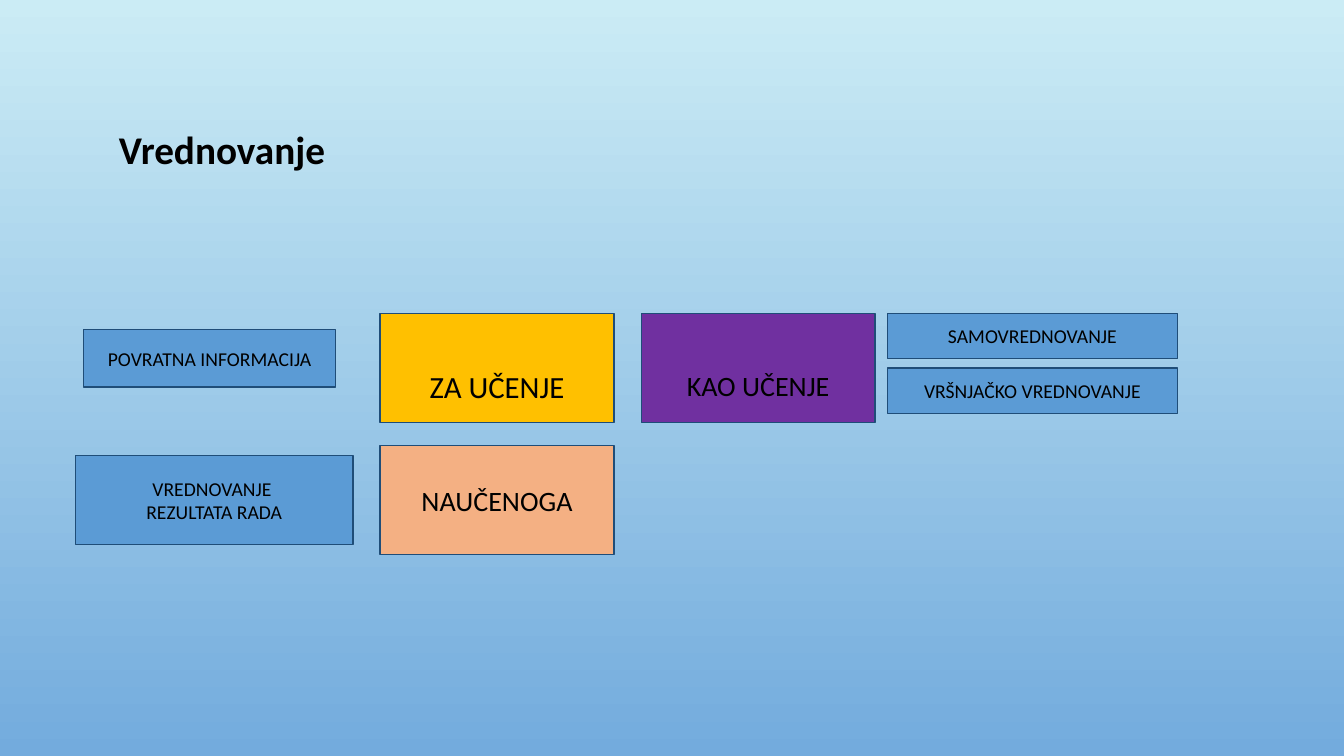
"""Build the slide on kinds of school assessment (Vrednovanje)."""
import pptx
import pptx.dml.color
import pptx.enum.shapes
import pptx.enum.text
import pptx.util

Inches = pptx.util.Inches
Pt = pptx.util.Pt


def color(value):
    return pptx.dml.color.RGBColor.from_string(value)


class AssessmentSlide:
    font_name = "Calibri"
    text_color = "000000"
    line_color = "1F4D78"
    detail_fill = "5B9BD5"

    def __init__(self, slide):
        self.slide = slide

    def background(self, top_color, bottom_color):
        fill = self.slide.background.fill
        fill.gradient()
        fill.gradient_angle = 270
        for stop, value in zip(fill.gradient_stops, (top_color, bottom_color)):
            stop.color.rgb = color(value)

    def set_text(self, shape, text, size, alignment, bold=False):
        frame = shape.text_frame
        frame.word_wrap = True
        frame.text = text
        for paragraph in frame.paragraphs:
            paragraph.alignment = alignment
            paragraph.font.name = self.font_name
            paragraph.font.size = Pt(size)
            paragraph.font.bold = bold
            paragraph.font.color.rgb = color(self.text_color)

    def title(self, text, left, top, width, height):
        shape = self.slide.shapes.add_textbox(
            Inches(left), Inches(top), Inches(width), Inches(height))
        self.set_text(shape, text, 28, pptx.enum.text.PP_ALIGN.LEFT, bold=True)

    def box(self, text, left, top, width, height, fill, size, margin_top=0.05):
        shape = self.slide.shapes.add_shape(
            pptx.enum.shapes.MSO_SHAPE.RECTANGLE,
            Inches(left), Inches(top), Inches(width), Inches(height))
        shape.shadow.inherit = False
        shape.fill.solid()
        shape.fill.fore_color.rgb = color(fill)
        shape.line.color.rgb = color(self.line_color)
        shape.line.width = Pt(1)
        shape.text_frame.vertical_anchor = pptx.enum.text.MSO_ANCHOR.MIDDLE
        shape.text_frame.margin_top = Inches(margin_top)
        self.set_text(shape, text, size, pptx.enum.text.PP_ALIGN.CENTER)

    def kind(self, text, left, top, fill, size, margin_top=0.05):
        self.box(text, left, top, 2.32, 1.08, fill, size, margin_top)

    def detail(self, text, left, top, width, height):
        self.box(text, left, top, width, height, self.detail_fill, 14)


def main():
    presentation = pptx.Presentation()
    presentation.slide_width = Inches(13.33)
    presentation.slide_height = Inches(7.5)
    page = AssessmentSlide(
        presentation.slides.add_slide(presentation.slide_layouts[6]))

    page.background("CBECF5", "73ABDD")
    page.kind("ZA UČENJE", 3.77, 3.11, "FFC000", 22, margin_top=0.42)
    page.kind("KAO UČENJE", 6.36, 3.11, "7030A0", 20, margin_top=0.39)
    page.kind("NAUČENOGA", 3.77, 4.42, "F4B083", 20)
    page.detail("POVRATNA INFORMACIJA", 0.83, 3.27, 2.5, 0.57)
    for row, text in enumerate(("SAMOVREDNOVANJE", "VRŠNJAČKO VREDNOVANJE")):
        page.detail(text, 8.8, 3.11 + row * 0.54, 2.88, 0.45)
    page.detail("VREDNOVANJE \nREZULTATA RADA", 0.75, 4.52, 2.75, 0.88)
    page.title("Vrednovanje", 1.08, 1.19, 3.1, 0.57)

    presentation.save("out.pptx")


if __name__ == "__main__":
    main()
